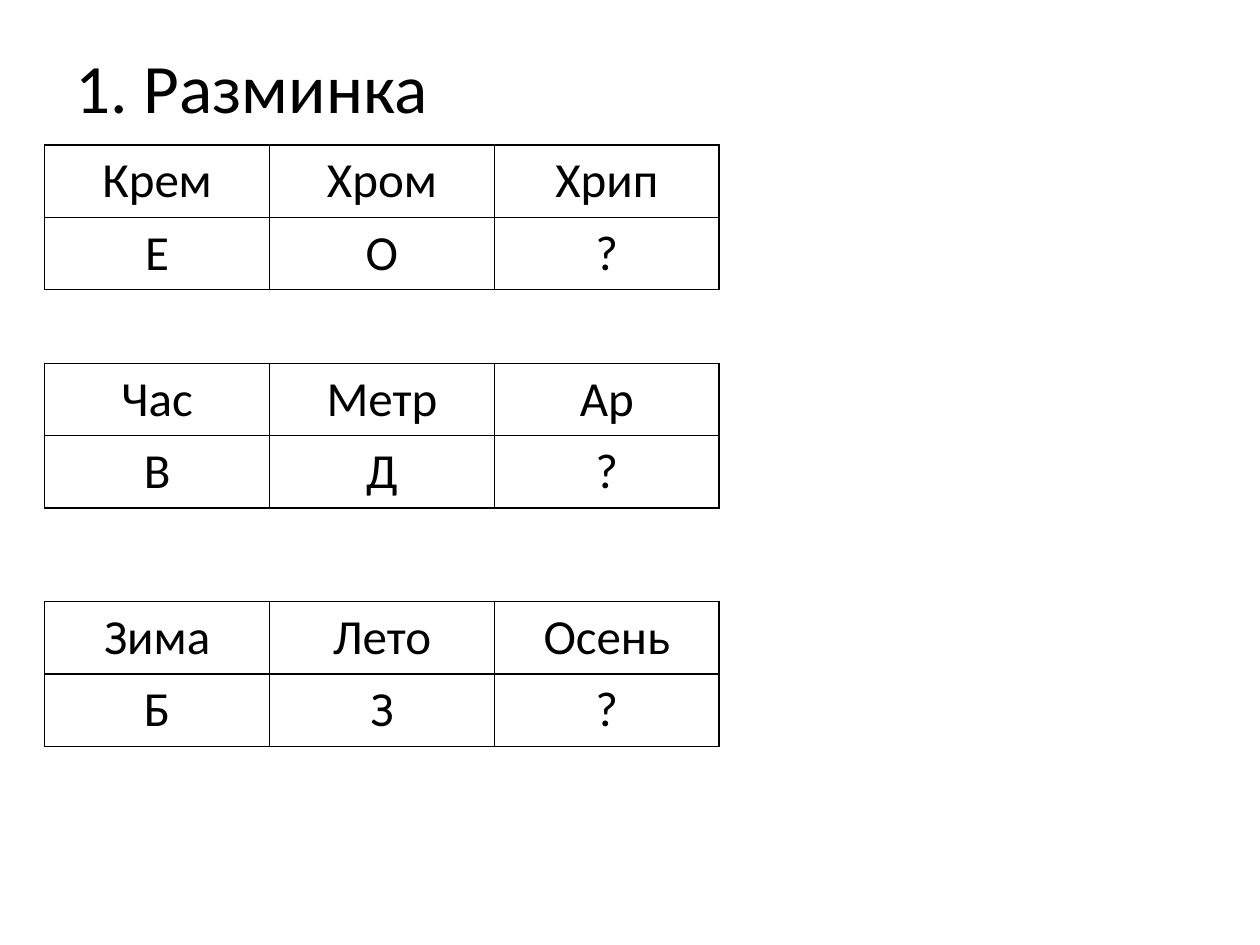
from lxml.etree import SubElement
from pptx import Presentation
from pptx.dml.color import RGBColor
from pptx.enum.text import MSO_ANCHOR, PP_ALIGN
from pptx.oxml.ns import qn
from pptx.util import Pt

BLACK = RGBColor(0x00, 0x00, 0x00)
WHITE = RGBColor(0xFF, 0xFF, 0xFF)

TITLE_FONT = {"name": "Calibri", "size": Pt(39.6)}
PUZZLE_FONT = {"name": "Calibri", "size": Pt(28)}
PLAIN_TABLE = {"first_row": False, "horz_banding": False}
TITLE_FRAME = {"word_wrap": True, "vertical_anchor": MSO_ANCHOR.MIDDLE}

ROW_HEIGHT = 41.4
PUZZLE_LEFT = 25.5
PUZZLE_WIDTH = 385.5
PUZZLES = [
    (82.8, [("Крем", "Хром", "Хрип"), ("Е", "О", "?")]),
    (207.6, [("Час", "Метр", "Ар"), ("В", "Д", "?")]),
    (343.7, [("Зима", "Лето", "Осень"), ("Б", "З", "?")]),
]


def apply_format(target, values):
    """Set each attribute of the target from the dict of values."""
    for attribute, value in values.items():
        setattr(target, attribute, value)


def write_text(paragraph, wording, font_values):
    """Write one run of black text in the given font."""
    run = paragraph.add_run()
    run.text = wording
    apply_format(run.font, font_values)
    run.font.color.rgb = BLACK


def draw_borders(cell):
    """Draw a one-point line on all four sides of the cell."""
    properties = cell._tc.get_or_add_tcPr()
    for position, side in enumerate(("a:lnL", "a:lnR", "a:lnT", "a:lnB")):
        border = SubElement(properties, qn(side), w=str(Pt(1)))
        fill = SubElement(border, qn("a:solidFill"))
        SubElement(fill, qn("a:srgbClr"), val=str(BLACK))
        properties.insert(position, border)


def add_title(slide, left, top, width, height):
    """Place the heading in the given box."""
    heading = slide.shapes.add_textbox(Pt(left), Pt(top), Pt(width), Pt(height))
    apply_format(heading.text_frame, TITLE_FRAME)
    write_text(heading.text_frame.paragraphs[0], "1. Разминка", TITLE_FONT)


def add_puzzle(slide, rows, left, top, width, height):
    """Place one word puzzle as a ruled table in the given box."""
    puzzle = slide.shapes.add_table(
        len(rows), len(rows[0]), Pt(left), Pt(top), Pt(width), Pt(height)
    ).table
    apply_format(puzzle, PLAIN_TABLE)
    for row_index, row in enumerate(rows):
        for column_index, wording in enumerate(row):
            cell = puzzle.cell(row_index, column_index)
            cell.fill.solid()
            cell.fill.fore_color.rgb = WHITE
            draw_borders(cell)
            paragraph = cell.text_frame.paragraphs[0]
            paragraph.alignment = PP_ALIGN.CENTER
            write_text(paragraph, wording, PUZZLE_FONT)


def main():
    """Build the warm-up slide and save it."""
    presentation = Presentation()
    apply_format(presentation, {"slide_width": Pt(720), "slide_height": Pt(540)})
    slide = presentation.slides.add_slide(presentation.slide_layouts[6])
    add_title(slide, 36, 21.6, 648, 55.4)
    for top, rows in PUZZLES:
        add_puzzle(slide, rows, PUZZLE_LEFT, top, PUZZLE_WIDTH, ROW_HEIGHT * len(rows))
    presentation.save("out.pptx")


if __name__ == "__main__":
    main()
